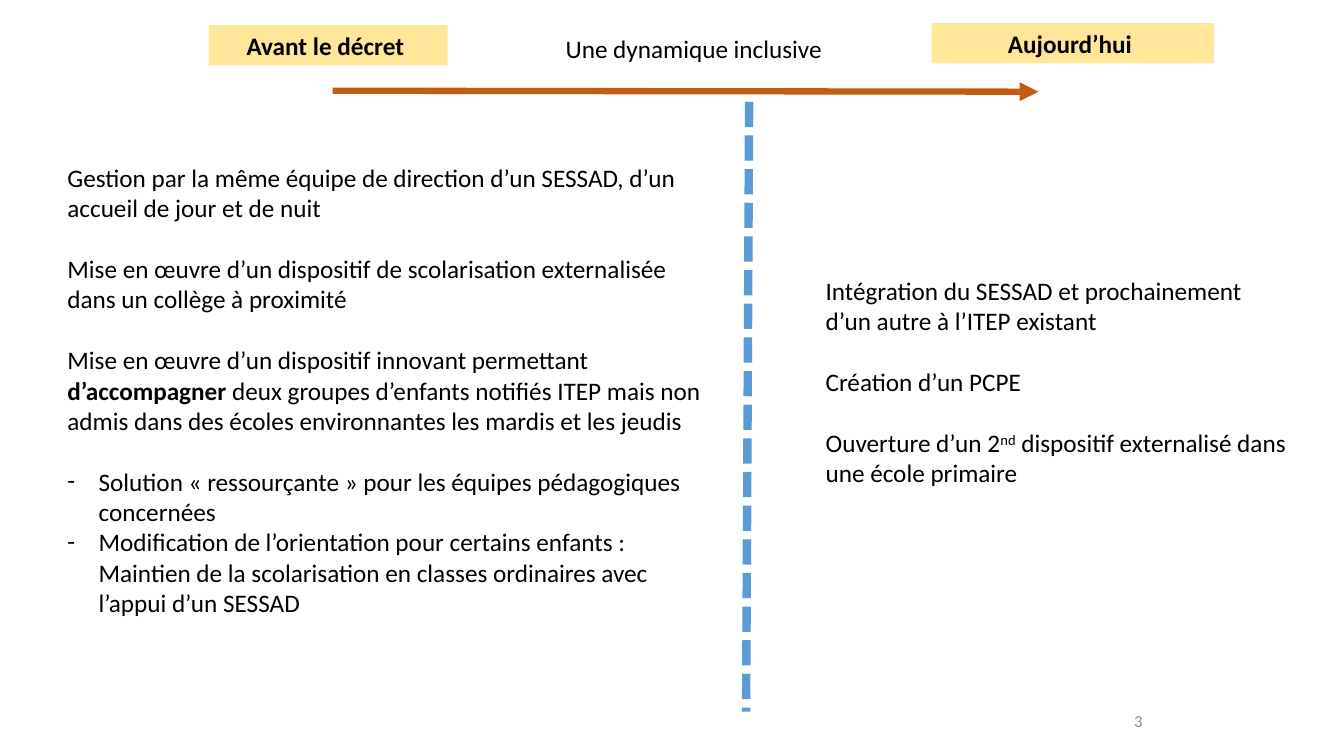
from lxml.etree import SubElement
from pptx import Presentation
from pptx.dml.color import RGBColor
from pptx.enum.dml import MSO_LINE
from pptx.enum.shapes import MSO_CONNECTOR, MSO_SHAPE
from pptx.enum.text import MSO_ANCHOR, PP_ALIGN
from pptx.oxml.ns import qn
from pptx.util import Inches, Pt

COLORS = {"text": "000000", "number": "8C8C8C", "band": "FFE699",
          "divider": "5B9BD5", "arrow": "C55A11"}
BLOCK_GAP = 22  # one line of 18 pt text

prs = Presentation()
prs.slide_width, prs.slide_height = Inches(13.33), Inches(7.5)
slide = prs.slides.add_slide(prs.slide_layouts[6])
shapes = slide.shapes


def write(shape, paragraphs, align=PP_ALIGN.LEFT, anchor=MSO_ANCHOR.TOP, size=18, color="text"):
    """Fill a shape with (space before, bullet, runs) paragraphs; a run is (text, style)."""
    frame = shape.text_frame
    frame.word_wrap = True
    frame.vertical_anchor = anchor
    for i, (gap, bullet, runs) in enumerate(paragraphs):
        paragraph = frame.paragraphs[0] if i == 0 else frame.add_paragraph()
        paragraph.alignment = align
        paragraph.space_before = Pt(gap)
        if bullet:
            props = paragraph._p.get_or_add_pPr()
            props.set("marL", str(Inches(0.31)))
            props.set("indent", str(-Inches(0.31)))
            SubElement(props, qn("a:buFont"), typeface="Calibri")
            SubElement(props, qn("a:buChar"), char=bullet)
        for text, style in runs:
            run = paragraph.add_run()
            run.text = text
            run.font.name = "Calibri"
            run.font.size = Pt(size)
            run.font.bold = style == "bold"
            run.font.color.rgb = RGBColor.from_string(COLORS[color])
            if style == "superscript":
                run._r.get_or_add_rPr().set("baseline", "30000")


def add_line(x1, y1, x2, y2, color, width):
    connector = shapes.add_connector(MSO_CONNECTOR.STRAIGHT, Inches(x1), Inches(y1),
                                     Inches(x2), Inches(y2))
    connector.line.color.rgb = RGBColor.from_string(COLORS[color])
    connector.line.width = Pt(width)
    SubElement(connector._element.spPr, qn("a:effectLst"))
    return connector


page_number = shapes.add_textbox(Inches(9.18), Inches(6.95), Inches(2.25), Inches(0.4))
write(page_number, [(0, None, [("3", None)])], PP_ALIGN.RIGHT, MSO_ANCHOR.MIDDLE, 12, "number")

divider = add_line(7.43, 1.01, 7.4, 7.06, "divider", 6)
divider.line.dash_style = MSO_LINE.SQUARE_DOT

for heading, left, top, width in [("Avant le décret ", 2.07, 0.25, 2.37),
                                  ("Aujourd’hui ", 9.24, 0.23, 2.8)]:
    band = shapes.add_shape(MSO_SHAPE.RECTANGLE, Inches(left), Inches(top),
                            Inches(width), Inches(0.4))
    band.shadow.inherit = False
    band.fill.solid()
    band.fill.fore_color.rgb = RGBColor.from_string(COLORS["band"])
    band.line.fill.background()
    write(band, [(0, None, [(heading, "bold")])], PP_ALIGN.CENTER)

before = shapes.add_textbox(Inches(0.57), Inches(1.56), Inches(6.58), Inches(4.95))
write(before, [
    (0, None, [("Gestion par la même équipe de direction d’un SESSAD, d’un accueil de jour "
                "et de nuit", None)]),
    (BLOCK_GAP, None, [("Mise en œuvre d’un dispositif de scolarisation externalisée dans un "
                        "collège à proximité", None)]),
    (BLOCK_GAP, None, [("Mise en œuvre d’un dispositif innovant permettant ", None),
                       ("d’accompagner", "bold"),
                       (" deux groupes d’enfants notifiés ITEP mais non admis dans des écoles "
                        "environnantes les mardis et les jeudis", None)]),
    (BLOCK_GAP, "-", [("Solution « ressourçante » pour les équipes pédagogiques "
                       "concernées", None)]),
    (0, "-", [("Modification de l’orientation pour certains enfants : Maintien de la "
               "scolarisation en classes ordinaires avec l’appui d’un SESSAD", None)]),
])

dynamic = shapes.add_textbox(Inches(5.11), Inches(0.28), Inches(3.6), Inches(0.4))
write(dynamic, [(0, None, [("Une dynamique inclusive ", None)])], PP_ALIGN.CENTER)

today = shapes.add_textbox(Inches(8.09), Inches(2.68), Inches(4.78), Inches(2.22))
write(today, [
    (0, None, [("Intégration du SESSAD et prochainement d’un autre à l’ITEP existant", None)]),
    (BLOCK_GAP, None, [("Création d’un PCPE", None)]),
    (BLOCK_GAP, None, [("Ouverture d’un 2", None), ("nd", "superscript"),
                       (" dispositif externalisé dans une école primaire", None)]),
])

arrow = add_line(3.3, 0.9, 10.3, 0.91, "arrow", 4.5)
SubElement(arrow.line._get_or_add_ln(), qn("a:tailEnd"), type="triangle")

prs.save("out.pptx")
